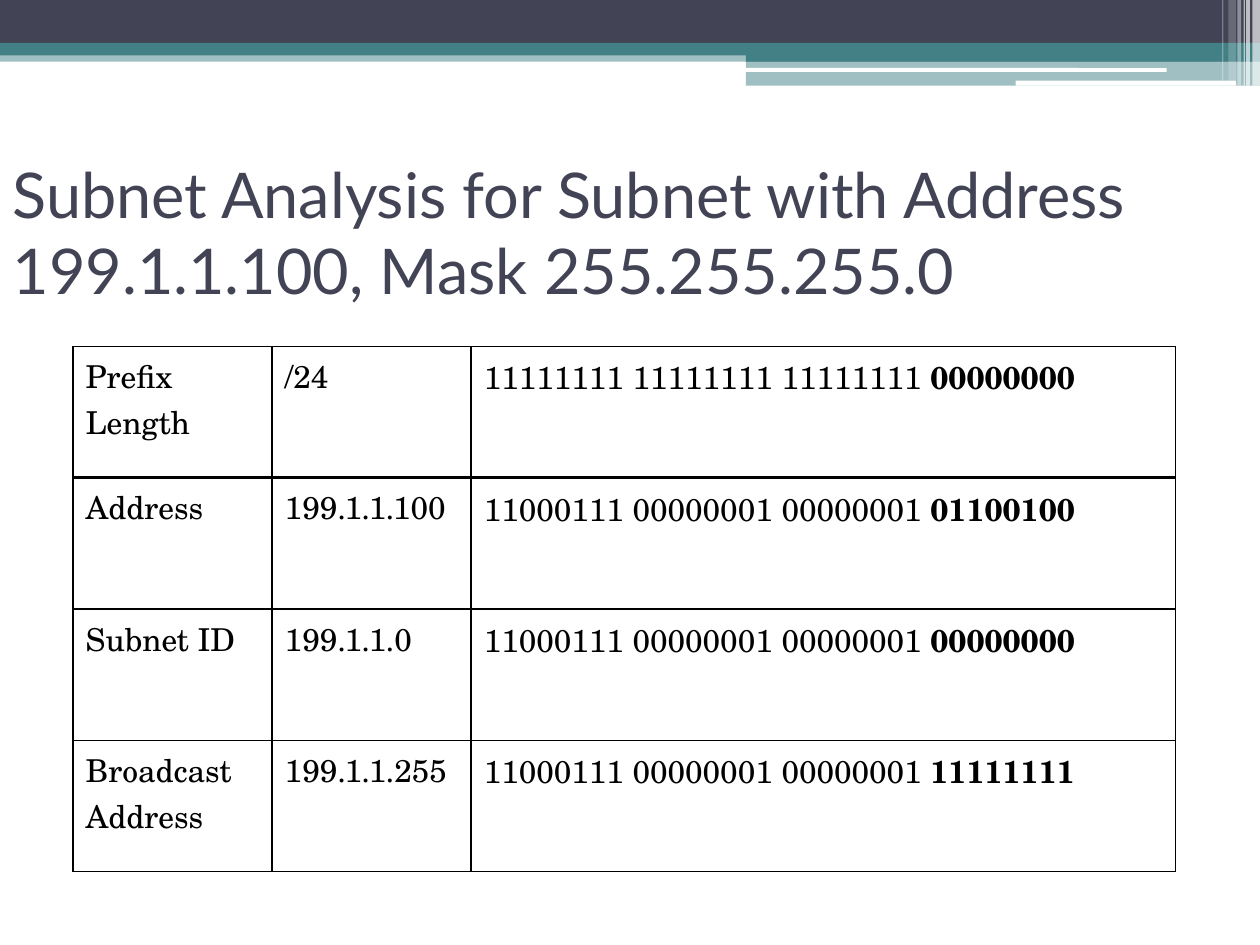
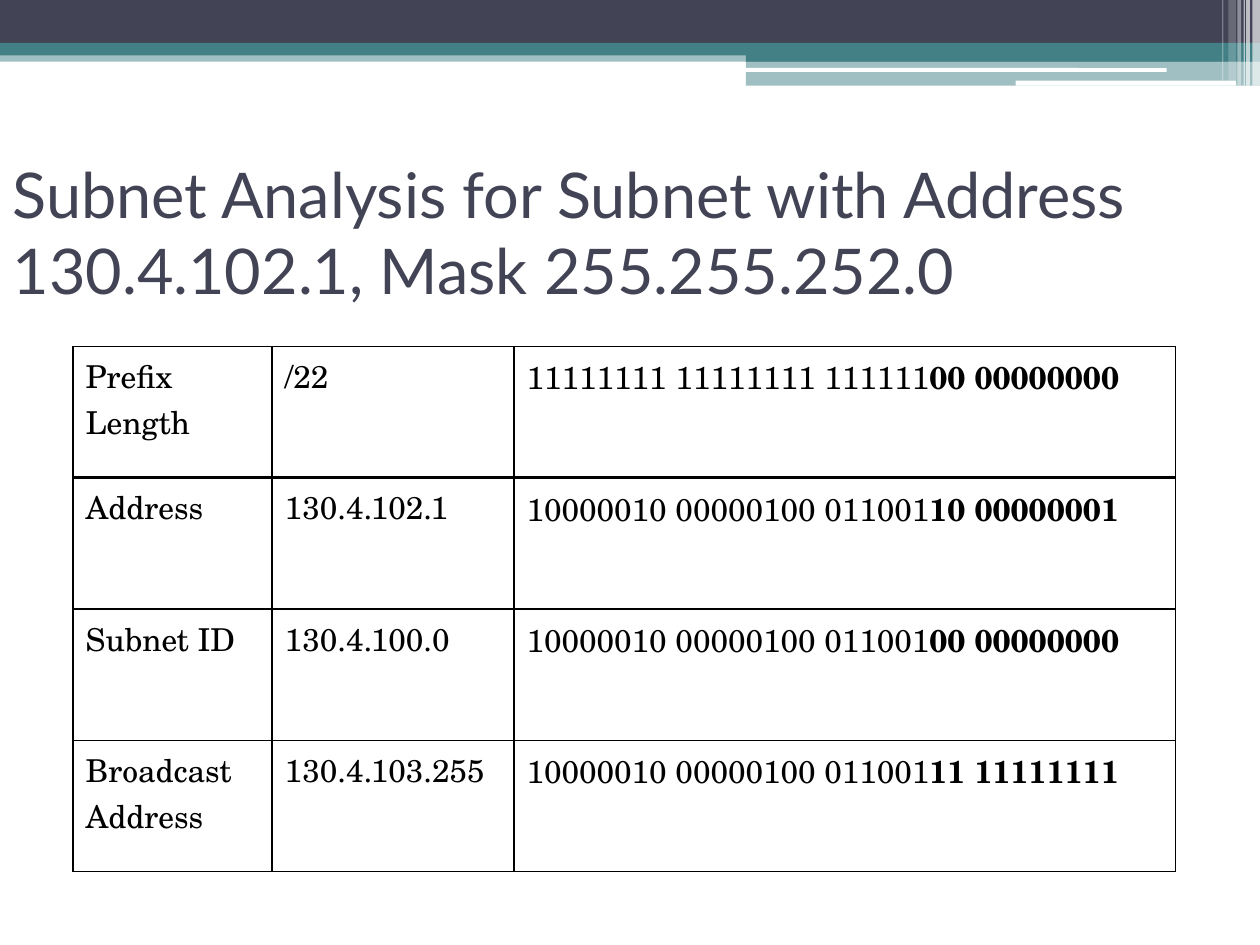
from lxml import etree
from pptx import Presentation
from pptx.dml.color import RGBColor
from pptx.enum import shapes, text
from pptx.oxml import ns
from pptx.util import Inches, Pt

HUES = {"navy": "424456", "teal": "438086", "white": "FFFFFF", "black": "000000"}
FONTS = {"title": "Lato", "table": "TeX Gyre Schola"}
LABELS = ["Prefix Length", "Address", "Subnet ID", "Broadcast Address"]

SUBNETS = [
    {
        "title": "Subnet Analysis for Subnet with Address 199.1.1.100, Mask 255.255.255.0",
        "values": ["/24", "199.1.1.100", "199.1.1.0", "199.1.1.255"],
        "bits": [
            ("11111111 11111111 11111111 ", "00000000"),
            ("11000111 00000001 00000001 ", "01100100"),
            ("11000111 00000001 00000001 ", "00000000"),
            ("11000111 00000001 00000001 ", "11111111"),
        ],
        "widths": [1.58, 1.58, 5.59],
    },
    {
        "title": "Subnet Analysis for Subnet with Address 130.4.102.1, Mask 255.255.252.0",
        "values": ["/22", "130.4.102.1", "130.4.100.0", "130.4.103.255"],
        "bits": [
            ("11111111 11111111 111111", "00 00000000"),
            ("10000010 00000100 011001", "10 00000001"),
            ("10000010 00000100 011001", "00 00000000"),
            ("10000010 00000100 011001", "11 11111111"),
        ],
        "widths": [1.58, 1.92, 5.25],
    },
]

RECT = shapes.MSO_SHAPE.RECTANGLE
ROUND = shapes.MSO_SHAPE.ROUNDED_RECTANGLE
BANDS = [
    (RECT, (0, 0.4, 10, 0.09), "teal", 50),
    (RECT, (0, 0, 10, 0.34), "navy", 100),
    (RECT, (0, 0.34, 10, 0.1), "teal", 100),
    (RECT, (5.92, 0.39, 4.08, 0.1), "teal", 100),
    (RECT, (5.92, 0.48, 4.08, 0.2), "teal", 50),
    (ROUND, (5.91, 0.54, 3.35, 0.03), "white", 100),
    (ROUND, (8.06, 0.64, 1.75, 0.04), "white", 100),
]
STRIPES = [
    (9.94, 0.06, 0.68, 65),
    (9.89, 0.03, 0.68, 65),
    (9.87, 0.01, 0.68, 60),
    (9.82, 0.03, 0.68, 40),
    (9.75, 0.06, 0.64, 20),
    (9.7, 0.01, 0.64, 30),
]
BANDS += [(RECT, (x, 0, wide, high), "white", alpha) for x, wide, high, alpha in STRIPES]

TITLE_BOX = (0, 1.25, 9.83, 1.17)
TABLE_BOX = (0.58, 2.75, 8.75, 4.17)


def inches(box):
    return [Inches(n) for n in box]


def paint(fill, hue, alpha=100):
    fill.solid()
    fill.fore_color.rgb = RGBColor.from_string(HUES[hue])
    if alpha < 100:
        color = fill._xPr.find(".//" + ns.qn("a:srgbClr"))
        etree.SubElement(color, ns.qn("a:alpha"), val=str(alpha * 1000))


def style(par, face, size, hue):
    par.font.name = FONTS[face]
    par.font.size = Pt(size)
    par.font.color.rgb = RGBColor.from_string(HUES[hue])


def add_bands(slide):
    tree = slide.slide_layout.shapes.element
    for num, (kind, box, hue, alpha) in enumerate(BANDS):
        band = slide.shapes.add_shape(kind, *inches(box))
        band.shadow.inherit = False
        band.line.fill.background()
        paint(band.fill, hue, alpha)
        band.element.nvSpPr.cNvPr.id = 20 + num
        tree.append(band.element)


def add_title(slide, words):
    title = slide.shapes.title
    title.left, title.top, title.width, title.height = inches(TITLE_BOX)
    frame = title.text_frame
    frame.text = words
    frame.auto_size = text.MSO_AUTO_SIZE.NONE
    frame.vertical_anchor = text.MSO_ANCHOR.MIDDLE
    par = frame.paragraphs[0]
    par.alignment = text.PP_ALIGN.LEFT
    style(par, "title", 36, "navy")


def add_borders(cell, top, bottom):
    props = cell._tc.get_or_add_tcPr()
    sides = [("L", 1), ("R", 1), ("T", top), ("B", bottom)]
    for spot, (side, width) in enumerate(sides):
        line = etree.Element(ns.qn("a:ln" + side), w=str(Pt(width)))
        fill = etree.SubElement(line, ns.qn("a:solidFill"))
        etree.SubElement(fill, ns.qn("a:srgbClr"), val=HUES["black"])
        props.insert(spot, line)


def add_table(slide, subnet):
    rows = list(zip(LABELS, subnet["values"], subnet["bits"]))
    table = slide.shapes.add_table(len(rows), 3, *inches(TABLE_BOX)).table
    table.first_row = table.horz_banding = False
    for col, width in zip(table.columns, subnet["widths"]):
        col.width = Inches(width)
    for r, (label, value, bits) in enumerate(rows):
        for c, parts in enumerate([(label,), (value,), bits]):
            cell = table.cell(r, c)
            paint(cell.fill, "white")
            add_borders(cell, 2 if r == 1 else 1, 2 if r == 0 else 1)
            par = cell.text_frame.paragraphs[0]
            style(par, "table", 18, "black")
            for n, part in enumerate(parts):
                run = par.add_run()
                run.text = part
                run.font.bold = n == 1


def main():
    deck = Presentation()
    deck.slide_width, deck.slide_height = Inches(10), Inches(7.5)
    layout = deck.slide_layouts[5]
    for num, subnet in enumerate(SUBNETS):
        slide = deck.slides.add_slide(layout)
        if num == 0:
            add_bands(slide)
        add_title(slide, subnet["title"])
        add_table(slide, subnet)
    deck.save("out.pptx")


if __name__ == "__main__":
    main()
